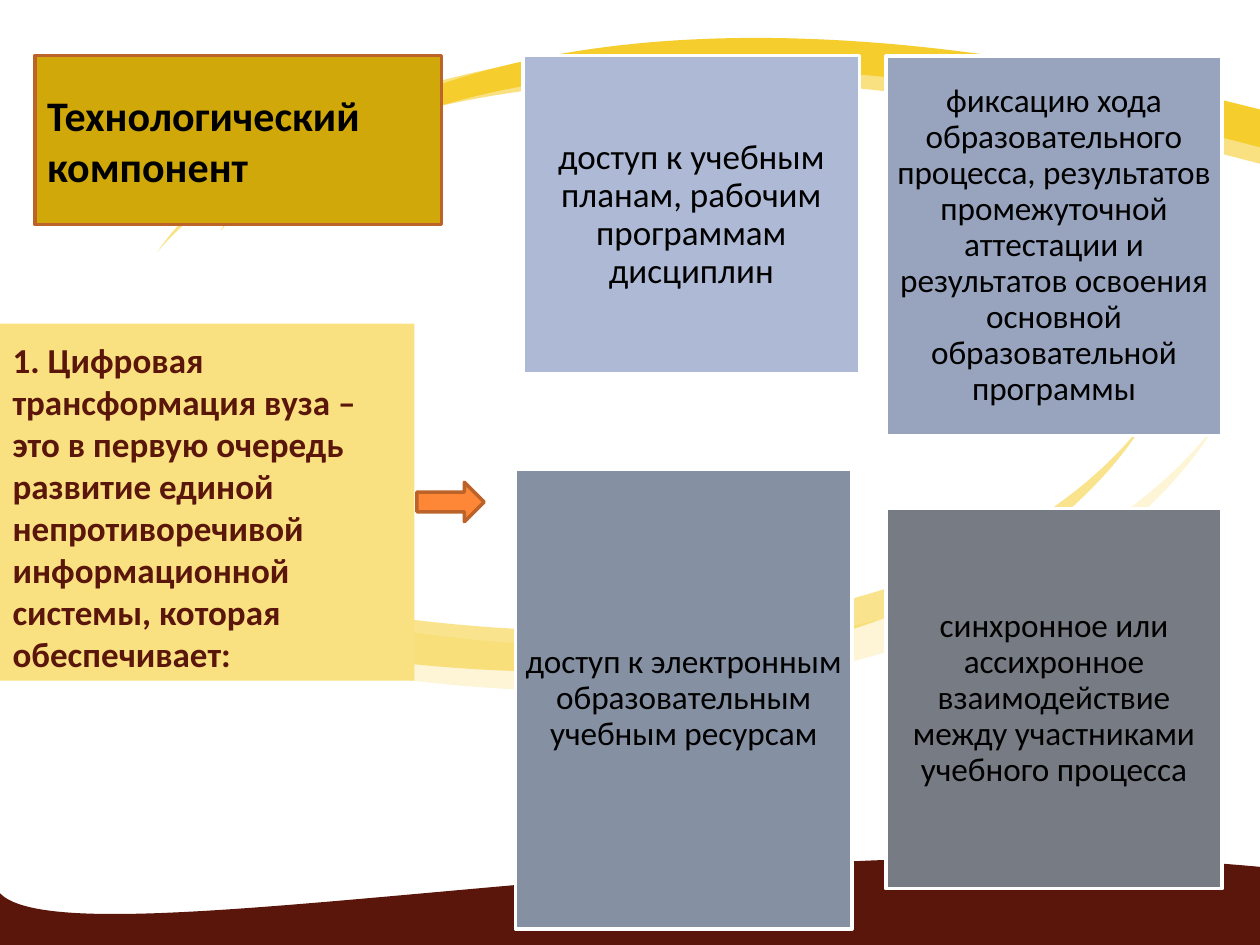
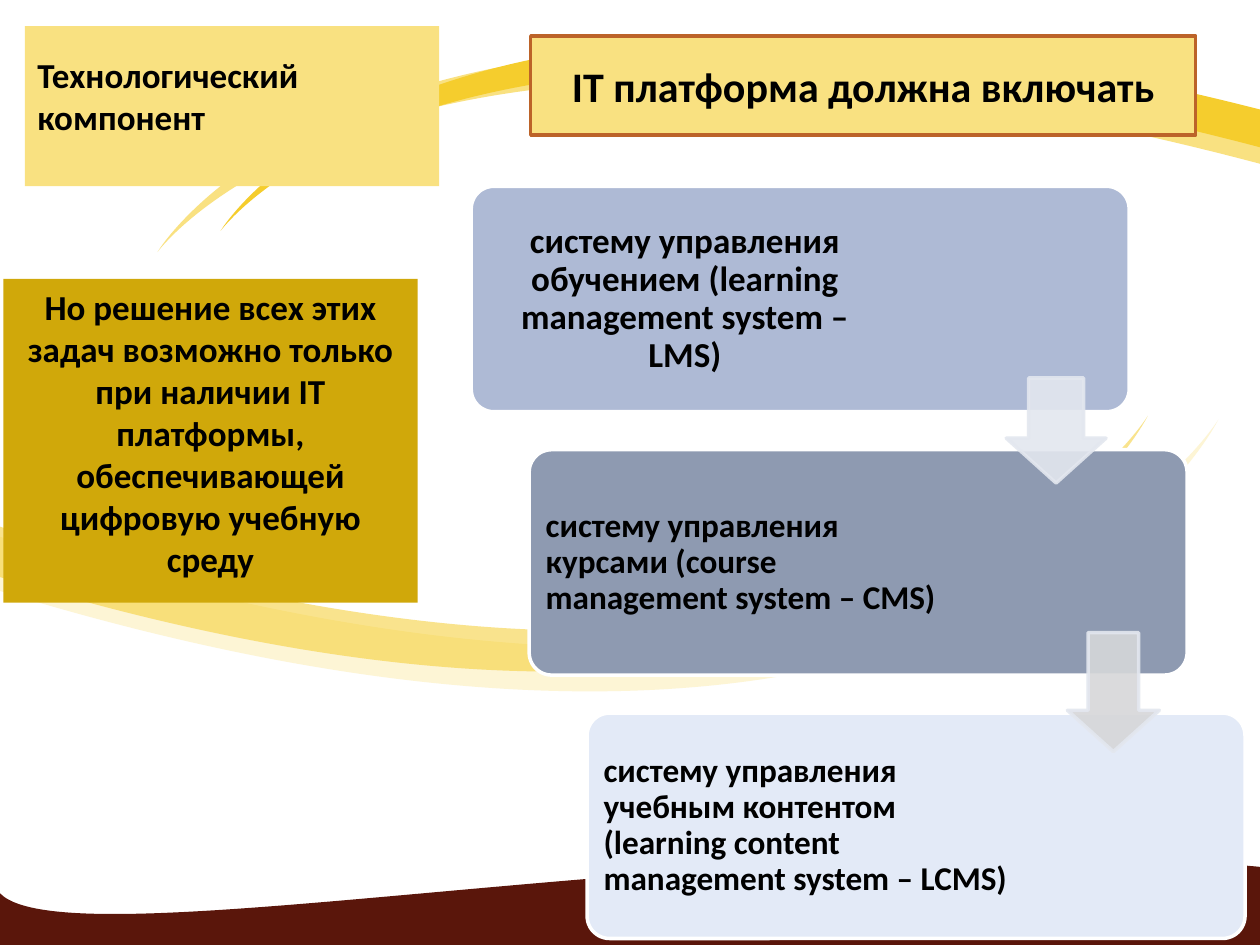
from lxml import etree
from pptx import Presentation
from pptx.dml.color import RGBColor
from pptx.enum.shapes import MSO_SHAPE
from pptx.enum.text import MSO_ANCHOR, MSO_AUTO_SIZE, PP_ALIGN
from pptx.oxml.ns import qn
from pptx.util import Pt

RECT, ROUNDED = MSO_SHAPE.RECTANGLE, MSO_SHAPE.ROUNDED_RECTANGLE
RIGHT_ARROW, DOWN_ARROW = MSO_SHAPE.RIGHT_ARROW, MSO_SHAPE.DOWN_ARROW
LEFT, CENTER = PP_ALIGN.LEFT, PP_ALIGN.CENTER
TOP, MIDDLE, BOTTOM = MSO_ANCHOR.TOP, MSO_ANCHOR.MIDDLE, MSO_ANCHOR.BOTTOM

FONT = "Calibri"
BLACK = RGBColor(0x00, 0x00, 0x00)
WHITE = RGBColor(0xFF, 0xFF, 0xFF)
MAROON = RGBColor(0x5A, 0x16, 0x0B)
CREAM = RGBColor(0xFD, 0xF5, 0xD5)
PALE_YELLOW = RGBColor(0xF9, 0xE1, 0x81)
YELLOW = RGBColor(0xF5, 0xCD, 0x2D)
GOLD = RGBColor(0xD0, 0xA8, 0x0A)
ORANGE = RGBColor(0xFE, 0x86, 0x37)
RUST = RGBColor(0xBC, 0x63, 0x29)
LIGHT_BLUE = RGBColor(0xAE, 0xBA, 0xD5)
MID_BLUE = RGBColor(0x98, 0xA4, 0xBE)
SLATE = RGBColor(0x85, 0x90, 0xA3)
GRAY = RGBColor(0x77, 0x7C, 0x84)
STEEL = RGBColor(0x8E, 0x9A, 0xB1)
ICE = RGBColor(0xE3, 0xEA, 0xF7)
MIST = RGBColor(0xE3, 0xE7, 0xEF)
SILVER = RGBColor(0xD6, 0xD7, 0xD9)

# Each wave: colour, opacity in percent, start point, then cubic curves
# (three points) and straight lines (one point).
WAVES = [
    (MAROON, 100, (0, 510.5),
     [[(40.3, 552.2), (429.1, 468), (720, 495.4)],
      [(720, 510.5), (720.7, 527), (720.7, 542.9)],
      [(0, 540.7)], [(0, 510.5)]]),
    (CREAM, 100, (0, 306.7),
     [[(549.4, 481), (696.2, 239.8), (696.2, 239.8)],
      [(696.2, 239.8), (563, 509.8), (0, 337.7)],
      [(0, 337.7), (0, 333.4), (0, 306.7)]]),
    (PALE_YELLOW, 100, (720, 93.6),
     [[(222.5, -38.2), (90, 144), (90, 144)],
      [(90, 144), (210.2, -60), (720, 69.8)],
      [(720, 69.8), (720, 73.4), (720, 93.6)]]),
    (YELLOW, 100, (720, 84.2),
     [[(251.3, -39.6), (126, 132), (126, 132)],
      [(126, 132), (239.8, -60), (720, 62.6)],
      [(720, 62.6), (720, 65.5), (720, 84.2)]]),
    (YELLOW, 54, (0, 301),
     [[(518.4, 465.1), (655.9, 237.6), (655.9, 237.6)],
      [(655.9, 237.6), (530.6, 491.8), (0, 329.8)],
      [(0, 329.8), (0, 326.2), (0, 301)]]),
]


def set_opacity(shape, percent):
    """Apply one opacity to the fill and the line colours of a shape."""
    for color in shape.element.spPr.iter(qn("a:srgbClr")):
        etree.SubElement(color, qn("a:alpha"), val=str(percent * 1000))


def bend(shape, segments):
    """Merge each three lines that stand for a curve into one cubic curve."""
    lines = iter(list(shape.element.spPr.iter(qn("a:lnTo"))))
    for segment in segments:
        first, *others = [next(lines) for _ in segment]
        if others:
            first.addprevious(curve := etree.Element(qn("a:cubicBezTo")))
            for line in (first, *others):
                curve.append(line[0])
                line.getparent().remove(line)


def add_waves(deck, page):
    """Draw the waves on a page, then move them behind the master's shapes."""
    tree = deck.slide_master.shapes.element
    for position, (color, opacity, start, segments) in enumerate(WAVES, start=2):
        builder = page.shapes.build_freeform(*(Pt(value) for value in start))
        builder.add_line_segments(
            [(Pt(x), Pt(y)) for segment in segments for x, y in segment])
        wave = builder.convert_to_shape()
        bend(wave, segments)
        wave.shadow.inherit = False
        paint(wave, color)
        if opacity < 100:
            set_opacity(wave, opacity)
        tree.insert(position, wave.element)


def paint(shape, fill, line=None):
    shape.fill.solid()
    shape.fill.fore_color.rgb = fill
    if line is None:
        shape.line.fill.background()
    else:
        shape.line.color.rgb = line
        shape.line.width = Pt(2)


def add_box(page, kind, place, fill, line):
    box = page.shapes.add_shape(kind, *(Pt(value) for value in place))
    box.shadow.inherit = False
    paint(box, fill, line)
    return box


def write(shape, text, size, color=BLACK, bold=True, align=LEFT, anchor=MIDDLE,
          spacing=1.0, insets=(7.2, 3.6, 7.2, 3.6)):
    """Set the single paragraph of a shape; insets run left, top, right, bottom."""
    frame = shape.text_frame
    frame.word_wrap = True
    frame.auto_size = MSO_AUTO_SIZE.NONE
    frame.vertical_anchor = anchor
    (frame.margin_left, frame.margin_top,
     frame.margin_right, frame.margin_bottom) = (Pt(value) for value in insets)
    para = frame.paragraphs[0]
    para.alignment = align
    para.line_spacing = spacing
    para.space_before = Pt(0)
    span = para.add_run()
    span.text = text
    span.font.name = FONT
    span.font.size = Pt(size)
    span.font.bold = bold
    span.font.color.rgb = color


def place_holder(holder, place, fill):
    holder.left, holder.top, holder.width, holder.height = (
        Pt(value) for value in place)
    paint(holder, fill)


def remove_bullet(para):
    properties = para._p.get_or_add_pPr()
    properties.set("marL", "0")
    properties.set("indent", "0")
    etree.SubElement(properties, qn("a:buNone"))


def add_card(page, left, top, height, fill, size, text):
    card = add_box(page, RECT, (left, top, 192.2, height), fill, WHITE)
    write(card, text, size, bold=False, align=CENTER, spacing=0.9, insets=(5.5,) * 4)


def add_step(page, index, fill, size, align, right_inset, text):
    place = (269.3 + 33.1 * index, 106.5 + 150.5 * index, 376, 128.8)
    step = add_box(page, ROUNDED, place, fill, WHITE)
    step.adjustments[0] = 0.1
    write(step, text, size, align=align, spacing=0.9, insets=(5.7, 5.7, right_inset, 5.7))


def add_step_arrow(page, place, fill):
    arrow = add_box(page, DOWN_ARROW, place, fill, MIST)
    arrow.adjustments[0] = 0.55
    arrow.adjustments[1] = 0.45
    set_opacity(arrow, 90)


def build_information_system(page):
    title = page.shapes.title
    place_holder(title, (0, 185, 236.8, 204), PALE_YELLOW)
    write(title, "1. Цифровая трансформация вуза – это в первую очередь развитие "
          "единой непротиворечивой информационной системы, которая обеспечивает:",
          20, MAROON, anchor=BOTTOM)
    cards = [
        (299, 31.8, 182, LIGHT_BLUE, 20,
         "доступ к учебным планам, рабочим программам дисциплин"),
        (506.2, 32, 216.8, MID_BLUE, 19,
         "фиксацию хода образовательного процесса, результатов промежуточной "
         "аттестации и результатов освоения основной образовательной программы"),
        (294.6, 268, 263, SLATE, 19,
         "доступ к электронным образовательным учебным ресурсам"),
        (506.2, 290.7, 217.2, GRAY, 19,
         "синхронное или ассихронное взаимодействие между участниками "
         "учебного процесса"),
    ]
    for card in cards:
        add_card(page, *card)
    add_box(page, RIGHT_ARROW, (238.2, 275.6, 38.4, 22.5), ORANGE, RUST)
    component = add_box(page, RECT, (19.9, 31.8, 232.5, 96.5), GOLD, RUST)
    write(component, "Технологический компонент", 24)


def build_platform(page):
    title, body = page.shapes.title, page.placeholders[1]
    place_holder(title, (14.2, 15, 236.8, 91.4), PALE_YELLOW)
    write(title, "Технологический компонент", 20, anchor=BOTTOM,
          insets=(7.2, 3.6, 7.2, 28))
    steps = [
        (LIGHT_BLUE, 20, CENTER, 137.5,
         "систему управления обучением (learning management system – LMS)"),
        (STEEL, 19, LEFT, 128,
         "систему управления курсами (course management system – CMS)"),
        (ICE, 19, LEFT, 128,
         "систему управления учебным контентом (learning content management "
         "system – LCMS)"),
    ]
    for index, step in enumerate(steps):
        add_step(page, index, *step)
    add_step_arrow(page, (575, 216, 57, 60), MIST)
    add_step_arrow(page, (610, 361.5, 52.5, 68), SILVER)

    place_holder(body, (1.9, 159.4, 236.8, 185), GOLD)
    remove_bullet(body.text_frame.paragraphs[0])
    write(body, "Но решение всех этих задач возможно только при наличии IT "
          "платформы, обеспечивающей цифровую учебную среду", 20,
          align=CENTER, anchor=TOP)
    heading = add_box(page, RECT, (303.3, 20.7, 380, 56.5), PALE_YELLOW, RUST)
    write(heading, "IT платформа должна включать", 24, align=CENTER)


def main():
    deck = Presentation()
    deck.slide_width, deck.slide_height = Pt(720), Pt(540)
    title_only, title_and_body = deck.slide_layouts[5], deck.slide_layouts[1]
    system_page = deck.slides.add_slide(title_only)
    add_waves(deck, system_page)
    build_information_system(system_page)
    build_platform(deck.slides.add_slide(title_and_body))
    deck.save("out.pptx")


if __name__ == "__main__":
    main()
